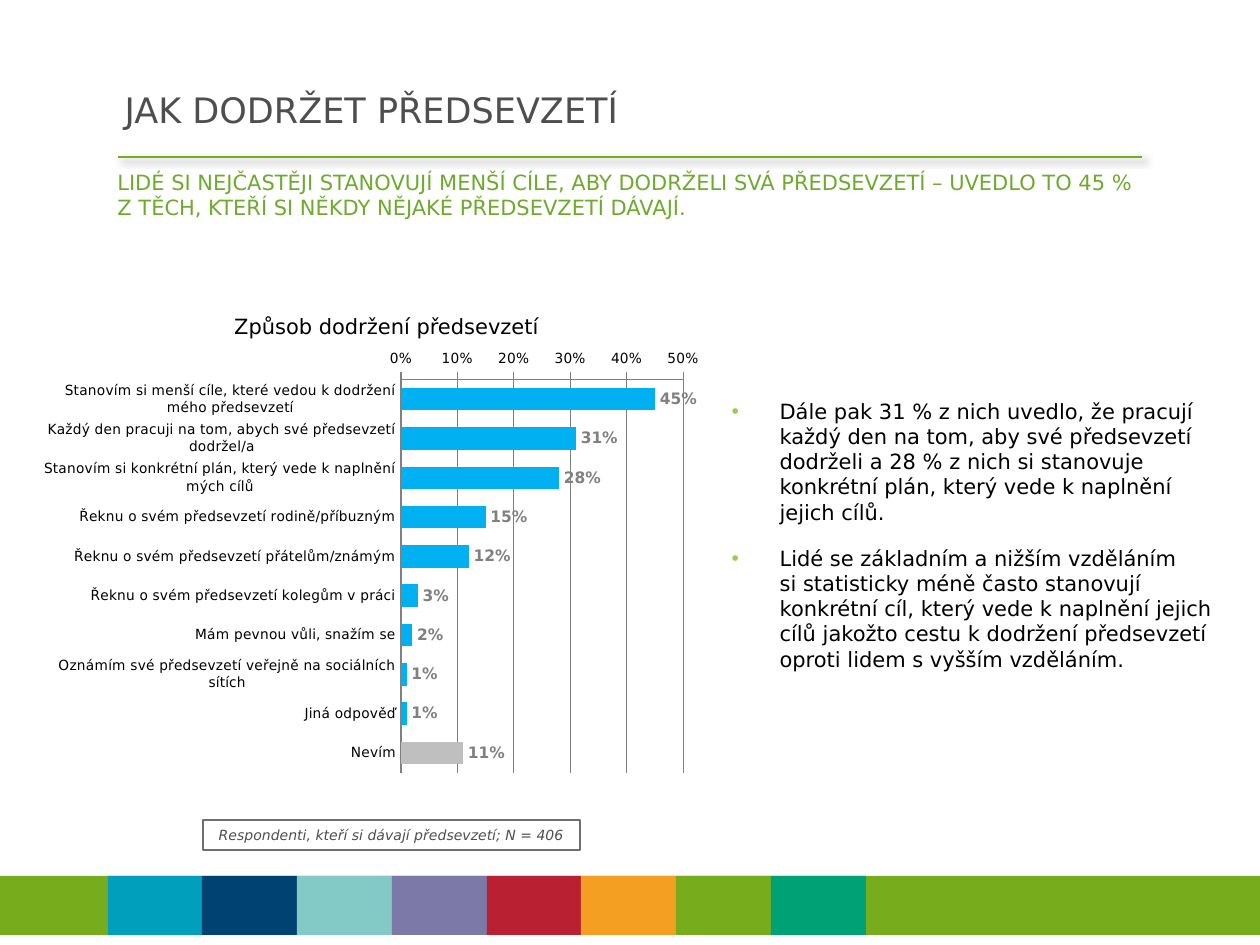
"""Builds the slide on how people keep their resolutions."""
from lxml import etree
from pptx import Presentation
from pptx.chart.data import CategoryChartData
from pptx.dml.color import RGBColor
from pptx.enum.chart import XL_CHART_TYPE, XL_LABEL_POSITION, XL_TICK_MARK, XL_AXIS_CROSSES
from pptx.enum.shapes import MSO_CONNECTOR, MSO_SHAPE
from pptx.enum.text import MSO_ANCHOR, MSO_AUTO_SIZE, PP_ALIGN
from pptx.oxml import parse_xml
from pptx.oxml.ns import nsdecls, qn
from pptx.util import Pt

LEFT, CENTER = PP_ALIGN.LEFT, PP_ALIGN.CENTER
TOP, MIDDLE = MSO_ANCHOR.TOP, MSO_ANCHOR.MIDDLE
BAR = XL_CHART_TYPE.BAR_CLUSTERED
OUTSIDE_END = XL_LABEL_POSITION.OUTSIDE_END
TICK_NONE, TICK_OUT = XL_TICK_MARK.NONE, XL_TICK_MARK.OUTSIDE
CROSS_MAX = XL_AXIS_CROSSES.MAXIMUM
RECT, STRAIGHT = MSO_SHAPE.RECTANGLE, MSO_CONNECTOR.STRAIGHT
FONT = "DejaVu Sans"
GREEN, GRAY, DARK, BLACK = "77AD1C", "808080", "4E4E4E", "000000"

TITLE = "JAK DODRŽET PŘEDSEVZETÍ"
SUBTITLE = ("LIDÉ SI NEJČASTĚJI STANOVUJÍ MENŠÍ CÍLE, ABY DODRŽELI SVÁ PŘEDSEVZETÍ – UVEDLO TO 45 % "
            "Z TĚCH, KTEŘÍ SI NĚKDY NĚJAKÉ PŘEDSEVZETÍ DÁVAJÍ.")
CHART_TITLE = "Způsob dodržení předsevzetí"
BASE_NOTE = "Respondenti, kteří si dávají předsevzetí; N = 406"
BULLETS = [
    "Dále pak 31 % z nich uvedlo, že pracují každý den na tom, aby své předsevzetí dodrželi "
    "a 28 % z nich si stanovuje konkrétní plán, který vede k naplnění jejich cílů.",
    "Lidé se základním a nižším vzděláním \vsi statisticky méně často stanovují konkrétní cíl, "
    "který vede k naplnění jejich cílů jakožto cestu k dodržení předsevzetí oproti lidem "
    "s vyšším vzděláním.",
]
ANSWERS = [
    ("Stanovím si menší cíle, které vedou k dodržení mého předsevzetí", 0.45),
    ("Každý den pracuji na tom, abych své předsevzetí dodržel/a", 0.31),
    ("Stanovím si konkrétní plán, který vede k naplnění mých cílů", 0.28),
    ("Řeknu o svém předsevzetí rodině/příbuzným", 0.15),
    ("Řeknu o svém předsevzetí přátelům/známým", 0.12),
    ("Řeknu o svém předsevzetí kolegům v práci", 0.03),
    ("Mám pevnou vůli, snažím se", 0.02),
    ("Oznámím své předsevzetí veřejně na sociálních sítích", 0.01),
    ("Jiná odpověď", 0.01),
    ("Nevím", 0.11),
]
BAND = ["009FBB", "004272", "83C9C6", "7C78A8", "B92032", "F49F22", GREEN, "00A275"]
BAND_LEFT, BAND_WIDTH, BAND_TOP, BAND_HEIGHT = 108, 758, 876, 59
PLOT = {"x": 0.55, "y": 0.1, "w": 0.44, "h": 0.86}


def px(n):
    return round(n * 914400 / 126)


def box(*lengths):
    return [px(n) for n in lengths]


def rgb(color):
    return RGBColor.from_string(color)


def style_font(font, size, color, bold=False, italic=False):
    font.name, font.size, font.bold, font.italic = FONT, Pt(size), bold, italic
    font.color.rgb = rgb(color)


def write(s, *texts, size=12, color=BLACK, italic=False, align=LEFT, anchor=TOP,
          bullet=None, gap=0, after=0):
    tf = s.text_frame
    tf.word_wrap, tf.auto_size, tf.vertical_anchor = True, MSO_AUTO_SIZE.NONE, anchor
    for i, text in enumerate(texts):
        p = tf.paragraphs[0] if i == 0 else tf.add_paragraph()
        p.text = text
        p.alignment = align
        p.space_before, p.space_after = Pt(gap if i else 0), Pt(after)
        if bullet:
            p.level = 1
            pPr = p._p.get_or_add_pPr()
            pPr.set("marL", str(px(48)))
            pPr.set("indent", str(px(-48)))
            clr = etree.SubElement(pPr, qn("a:buClr"))
            etree.SubElement(clr, qn("a:srgbClr")).set("val", bullet)
            etree.SubElement(pPr, qn("a:buChar")).set("char", "•")
        for r in p.runs:
            style_font(r.font, size, color, italic=italic)


def add_rect(shapes, bounds, fill=None, line=None):
    s = shapes.add_shape(RECT, *box(*bounds))
    s.shadow.inherit = False
    if fill:
        s.fill.solid()
        s.fill.fore_color.rgb = rgb(fill)
    else:
        s.fill.background()
    if line:
        s.line.color.rgb, s.line.width = rgb(line), Pt(0.75)
    else:
        s.line.fill.background()
    return s


def add_rule(shapes):
    line = shapes.add_connector(STRAIGHT, *box(118, 157, 1142, 157))
    line.line.color.rgb, line.line.width = rgb(GREEN), Pt(0.75)
    line._element.spPr.append(parse_xml(
        f'<a:effectLst {nsdecls("a")}><a:outerShdw blurRad="{Pt(4)}" dist="{Pt(3)}" dir="2700000">'
        '<a:srgbClr val="000000"><a:alpha val="40000"/></a:srgbClr></a:outerShdw></a:effectLst>'))


def add_band(shapes):
    add_rect(shapes, (0, BAND_TOP, 1260, BAND_HEIGHT), GREEN)
    edges = [BAND_LEFT + BAND_WIDTH * i // len(BAND) for i in range(len(BAND) + 1)]
    for left, right, color in zip(edges, edges[1:], BAND):
        add_rect(shapes, (left, BAND_TOP, right - left, BAND_HEIGHT), color)


def add_answers(shapes):
    data = CategoryChartData(number_format="0%")
    data.categories = [name for name, _ in ANSWERS]
    data.add_series("Series 1", [value for _, value in ANSWERS])
    chart = shapes.add_chart(BAR, *box(44, 334, 655, 457), data).chart
    chart.has_legend = chart.has_title = False
    style_font(chart.font, 8, BLACK)
    cat, val = chart.category_axis, chart.value_axis
    cat.reverse_order, cat.crosses = True, CROSS_MAX
    cat.major_tick_mark, val.major_tick_mark = TICK_NONE, TICK_OUT
    val.minimum_scale, val.maximum_scale, val.major_unit = 0, 0.5, 0.1
    val.tick_labels.number_format, val.tick_labels.number_format_is_linked = "0%", False
    for line in (cat.format.line, val.format.line, val.major_gridlines.format.line):
        line.color.rgb, line.width = rgb(GRAY), Pt(0.75)
    for axis in (cat, val):
        style_font(axis.tick_labels.font, 8, BLACK)

    plot = chart.plots[0]
    plot.gap_width, plot.vary_by_categories = 75, False
    series = plot.series[0]
    for fmt, color in ((series.format, "00B0F0"), (series.points[len(ANSWERS) - 1].format, "BFBFBF")):
        fmt.fill.solid()
        fmt.fill.fore_color.rgb = rgb(color)
    labels = series.data_labels
    labels.show_value, labels.position = True, OUTSIDE_END
    labels.number_format, labels.number_format_is_linked = "0%", False
    style_font(labels.font, 9, GRAY, bold=True)

    area = chart._chartSpace.chart.plotArea
    for old in area.findall(qn("c:layout")):
        area.remove(old)
    sizes = "".join(f'<c:{k} val="{v}"/>' for k, v in PLOT.items())
    area.insert(0, parse_xml(
        f'<c:layout {nsdecls("c")}><c:manualLayout><c:layoutTarget val="inner"/>'
        f'<c:xMode val="edge"/><c:yMode val="edge"/>{sizes}</c:manualLayout></c:layout>'))


def place(s, *bounds):
    s.left, s.top, s.width, s.height = box(*bounds)
    return s


def main():
    prs = Presentation()
    prs.slide_width, prs.slide_height = box(1260, 945)
    slide = prs.slides.add_slide(prs.slide_layouts[1])
    shapes = slide.shapes
    add_rule(shapes)
    add_band(shapes)
    write(place(shapes.title, 112, 78, 1118, 64), TITLE, size=20, color=DARK, anchor=MIDDLE, after=3)
    write(shapes.add_textbox(*box(105, 163, 1052, 69)), SUBTITLE, color="6EAA2E")
    add_answers(shapes)
    write(shapes.add_textbox(*box(44, 307, 685, 38)), CHART_TITLE, align=CENTER)
    write(add_rect(shapes, (203, 820, 377, 30), line="6E6E6E"), BASE_NOTE,
          size=8, color=DARK, italic=True, align=CENTER, anchor=MIDDLE)
    write(place(slide.placeholders[1], 719, 392, 507, 314), *BULLETS, bullet="92D050", gap=6, after=6)
    prs.save("out.pptx")


if __name__ == "__main__":
    main()
